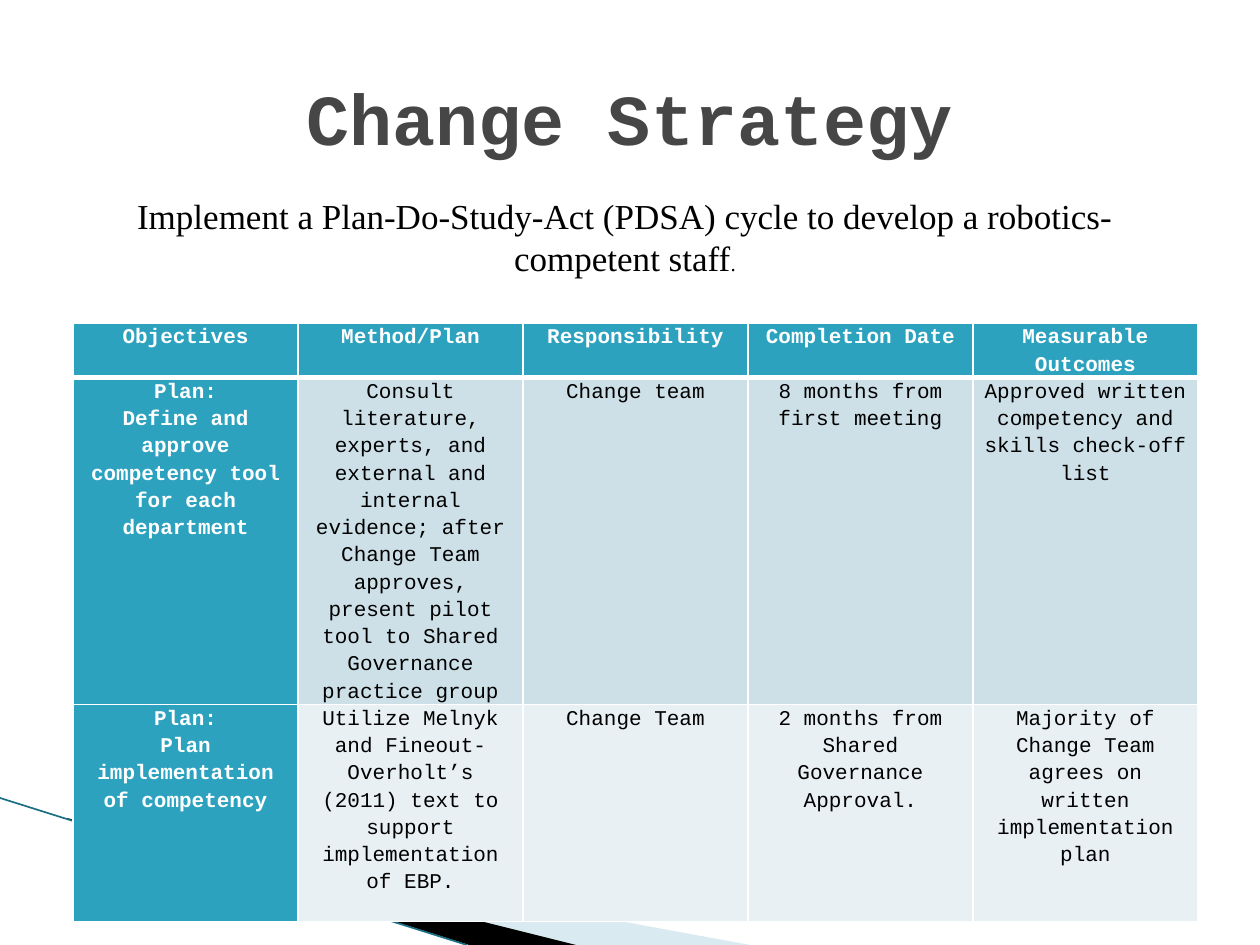
"""Build the Change Strategy slide with its PDSA planning table."""
from dataclasses import dataclass

import pptx
import pptx.dml.color
import pptx.enum.shapes
import pptx.enum.text
import pptx.oxml
import pptx.oxml.ns
import pptx.util
from lxml import etree

PX = 914400 / 126
COLORS = {"teal": "2DA2BF", "band1": "CDE0E8", "band2": "E8F0F4", "white": "FFFFFF",
          "black": "000000", "title": "464646", "pale": "A0CBDC", "line": "1B6F83"}
MONO, SERIF = "Courier New", "Times New Roman"


@dataclass
class Wedge:
    points: list[tuple[int, int]]
    color: str
    alpha: int = 100


@dataclass
class Label:
    box: tuple[int, int, int, int]
    runs: list[tuple[str, dict]]


WEDGES = [
    Wedge([(69, 820), (750, 945), (575, 945), (69, 819)], "pale", 40),
    Wedge([(67, 818), (576, 945), (469, 945), (68, 819)], "black"),
]
BODY = {"name": SERIF, "size": 20, "bold": False, "color": "black"}
LABELS = [
    Label((63, 38, 1134, 157), [
        ("Change Strategy", {"name": MONO, "size": 41, "bold": True, "color": "title"})]),
    Label((63, 188, 1124, 97), [
        ("Implement a Plan-Do-Study-Act (PDSA) cycle to develop a robotics-competent staff", BODY),
        (".", BODY | {"size": 12})]),
]
COL_WIDTH, ROW_HEIGHTS = 225, [54, 327, 217]
ROWS = [
    ["Objectives", "Method/Plan", "Responsibility", "Completion Date", "Measurable Outcomes"],
    ["Plan:\nDefine and approve competency tool for each department",
     "Consult literature, experts, and external and internal evidence; after Change Team "
     "approves, present pilot tool to Shared Governance practice group",
     "Change team", "8 months from first meeting",
     "Approved written competency and skills check-off list"],
    ["Plan:\nPlan implementation of competency",
     "Utilize Melnyk and Fineout-Overholt’s (2011) text to support implementation of EBP.",
     "Change Team", "2 months from Shared Governance Approval.",
     "Majority of Change Team agrees on written implementation plan"],
]


def px(n: int) -> pptx.util.Emu:
    """Turn pixels into EMU."""
    return pptx.util.Emu(round(n * PX))


def rgb(name: str) -> pptx.dml.color.RGBColor:
    """Look up a named colour."""
    return pptx.dml.color.RGBColor.from_string(COLORS[name])


def sub(parent, tag: str, **attrs: str):
    """Append a DrawingML element."""
    return etree.SubElement(parent, pptx.oxml.ns.qn(tag), attrs)


def format_run(r, fmt: dict) -> None:
    """Apply font values to a run."""
    for key, value in fmt.items():
        if key == "color":
            r.font.color.rgb = rgb(value)
        else:
            setattr(r.font, key, pptx.util.Pt(value) if key == "size" else value)


def draw_wedge(s, wedge: Wedge) -> None:
    """Draw a filled corner wedge."""
    builder = s.shapes.build_freeform(*wedge.points[0], scale=PX)
    builder.add_line_segments(wedge.points[1:], close=True)
    sp = builder.convert_to_shape()
    sp.shadow.inherit = False
    sp.fill.solid()
    sp.fill.fore_color.rgb = rgb(wedge.color)
    sp.line.fill.background()
    if wedge.alpha < 100:
        clr = sp.fill._xPr.find(".//" + pptx.oxml.ns.qn("a:srgbClr"))
        sub(clr, "a:alpha", val=str(wedge.alpha * 1000))


def draw_line(s, start: tuple[int, int], end: tuple[int, int]) -> None:
    """Draw the thin corner line."""
    sp = s.shapes.add_connector(pptx.enum.shapes.MSO_CONNECTOR.STRAIGHT,
                                *map(px, start + end))
    sp.line.color.rgb = rgb("line")
    sp.line.width = pptx.util.Pt(0.95)
    sub(sp._element.spPr, "a:effectLst")


def draw_label(s, label: Label) -> None:
    """Draw a centred text box."""
    tf = s.shapes.add_textbox(*map(px, label.box)).text_frame
    tf.word_wrap = True
    tf.vertical_anchor = pptx.enum.text.MSO_ANCHOR.MIDDLE
    p = tf.paragraphs[0]
    p.alignment = pptx.enum.text.PP_ALIGN.CENTER
    for text, fmt in label.runs:
        r = p.add_run()
        r.text = text
        format_run(r, fmt)


def fill_cell(cell, text: str, row: int, col: int) -> None:
    """Write and format one table cell."""
    head = row == 0 or col == 0
    margins = {"margin_left": 9, "margin_right": 9, "margin_top": 0, "margin_bottom": 0}
    for key, value in margins.items():
        setattr(cell, key, px(value))
    cell.text_frame.text = text
    for p in cell.text_frame.paragraphs:
        p.alignment = pptx.enum.text.PP_ALIGN.CENTER
        p.line_spacing = 1.15
        format_run(p.runs[0], {"name": MONO, "size": 12, "bold": head,
                               "color": "white" if head else "black"})
    tc_pr = cell._tc.get_or_add_tcPr()
    for side in "LRTB":
        thick = (row, side) in ((0, "B"), (1, "T"))
        ln = sub(tc_pr, f"a:ln{side}", w=str(pptx.util.Pt(3 if thick else 1)))
        sub(sub(ln, "a:solidFill"), "a:srgbClr", val=COLORS["white"])
    cell.fill.solid()
    cell.fill.fore_color.rgb = rgb("teal" if head else f"band{row}")


def draw_table(s, left: int, top: int) -> None:
    """Draw the planning table."""
    cols = len(ROWS[0])
    table = s.shapes.add_table(len(ROWS), cols, px(left), px(top),
                               px(cols * COL_WIDTH), px(sum(ROW_HEIGHTS))).table
    for column in table.columns:
        column.width = px(COL_WIDTH)
    for i, (height, texts) in enumerate(zip(ROW_HEIGHTS, ROWS)):
        table.rows[i].height = px(height)
        for j, text in enumerate(texts):
            fill_cell(table.cell(i, j), text, i, j)


def main() -> None:
    """Build and save the slide."""
    prs = pptx.Presentation()
    prs.slide_width, prs.slide_height = px(1260), px(945)
    s = prs.slides.add_slide(prs.slide_layouts[6])
    for wedge in WEDGES:
        draw_wedge(s, wedge)
    draw_line(s, (0, 798), (467, 945))
    draw_table(s, 73, 323)
    for label in LABELS:
        draw_label(s, label)
    prs.save("out.pptx")


if __name__ == "__main__":
    main()
